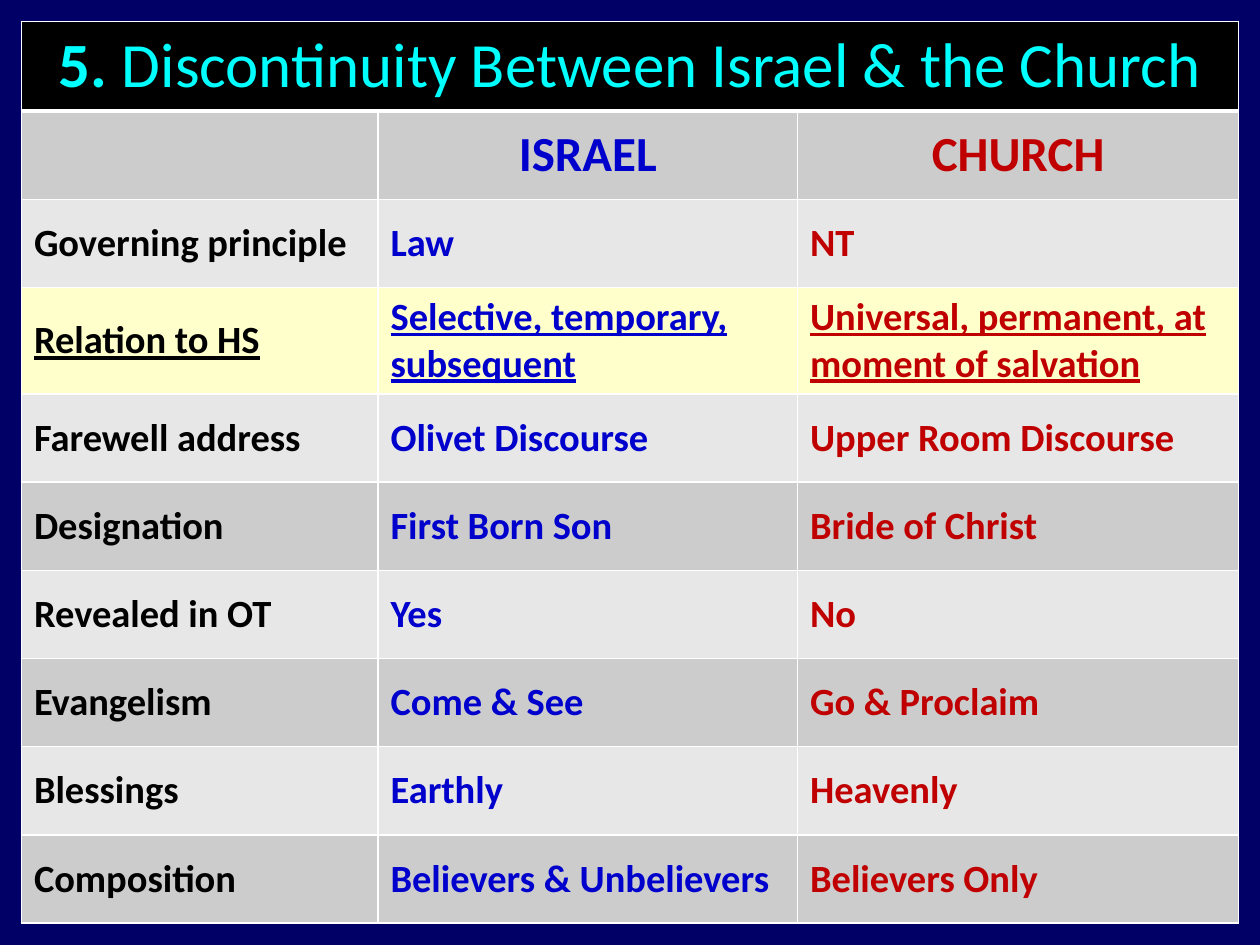
from lxml import etree
from pptx import Presentation
from pptx.dml.color import RGBColor
from pptx.enum.text import MSO_ANCHOR as Anchor, PP_ALIGN as Align
from pptx.oxml.ns import qn
from pptx.util import Inches, Pt

BLACK, BLUE, RED, WHITE = "000000", "0000CC", "C00000", "FFFFFF"
DARK_BAND, LIGHT_BAND, HIGHLIGHT = "CCCCCC", "E7E7E7", "FFFFCC"
COLUMN_WIDTHS = (2.83, 3.33, 3.5)
ROW_HEIGHT = 0.7
TITLE = "Discontinuity Between Israel & the Church"
HEADINGS = ("", "ISRAEL", "CHURCH")
HIGHLIGHTED_TOPIC = "Relation to HS"
COMPARISONS = (
    ("Governing principle", "Law", "NT"),
    (HIGHLIGHTED_TOPIC, "Selective, temporary, subsequent",
     "Universal, permanent, at moment of salvation"),
    ("Farewell address", "Olivet Discourse", "Upper Room Discourse"),
    ("Designation", "First Born Son", "Bride of Christ"),
    ("Revealed in OT", "Yes", "No"),
    ("Evangelism", "Come & See", "Go & Proclaim"),
    ("Blessings", "Earthly", "Heavenly"),
    ("Composition", "Believers & Unbelievers", "Believers Only"),
)


def paint(fill, color):
    fill.solid()
    fill.fore_color.rgb = RGBColor.from_string(color)


def write(paragraph, text, size=22, color=BLACK, bold=True, underline=False,
          align=Align.LEFT):
    paragraph.alignment = align
    run = paragraph.add_run()
    run.text = text
    font = run.font
    font.name, font.size, font.bold = "Calibri", Pt(size), bold
    font.underline = underline
    font.color.rgb = RGBColor.from_string(color)


def style_cell(cell, color, bottom=1):
    cell.vertical_anchor = Anchor.MIDDLE
    paint(cell.fill, color)
    properties = cell._tc.get_or_add_tcPr()
    edges = (("a:lnL", 1), ("a:lnR", 1), ("a:lnT", 1), ("a:lnB", bottom))
    for position, (edge, width) in enumerate(edges):
        line = etree.Element(qn(edge), w=str(Pt(width)))
        solid = etree.SubElement(line, qn("a:solidFill"))
        etree.SubElement(solid, qn("a:srgbClr"), val=WHITE)
        properties.insert(position, line)


def fill_title(row_cells):
    for cell in row_cells:
        style_cell(cell, BLACK, bottom=3)
    row_cells[0].merge(row_cells[-1])
    paragraph = row_cells[0].text_frame.paragraphs[0]
    for text, bold in (("5. ", True), (TITLE, False)):
        write(paragraph, text, size=36, color="00FFFF", bold=bold,
              align=Align.CENTER)


def fill_row(row_cells, texts, band, **text_format):
    for cell, text, color in zip(row_cells, texts, (BLACK, BLUE, RED)):
        style_cell(cell, band)
        if text:
            write(cell.text_frame.paragraphs[0], text, color=color,
                  **text_format)


def add_comparison(slide, left, top):
    row_count = len(COMPARISONS) + 2
    table = slide.shapes.add_table(
        row_count, len(COLUMN_WIDTHS), Inches(left), Inches(top),
        Inches(sum(COLUMN_WIDTHS)), Inches(ROW_HEIGHT * row_count)).table
    for column, width in zip(table.columns, COLUMN_WIDTHS):
        column.width = Inches(width)
    for row in table.rows:
        row.height = Inches(ROW_HEIGHT)

    title_row, heading_row, *topic_rows = [list(row.cells) for row in table.rows]
    fill_title(title_row)
    fill_row(heading_row, HEADINGS, DARK_BAND, size=28, align=Align.CENTER)
    for index, (row_cells, texts) in enumerate(zip(topic_rows, COMPARISONS)):
        highlighted = texts[0] == HIGHLIGHTED_TOPIC
        band = DARK_BAND if index % 2 else LIGHT_BAND
        fill_row(row_cells, texts, HIGHLIGHT if highlighted else band,
                 underline=highlighted)


def main():
    deck = Presentation()
    deck.slide_width, deck.slide_height = Inches(10), Inches(7.5)
    slide = deck.slides.add_slide(deck.slide_layouts[6])
    paint(slide.background.fill, "000066")
    add_comparison(slide, 0.17, 0.17)
    deck.save("out.pptx")


if __name__ == "__main__":
    main()
